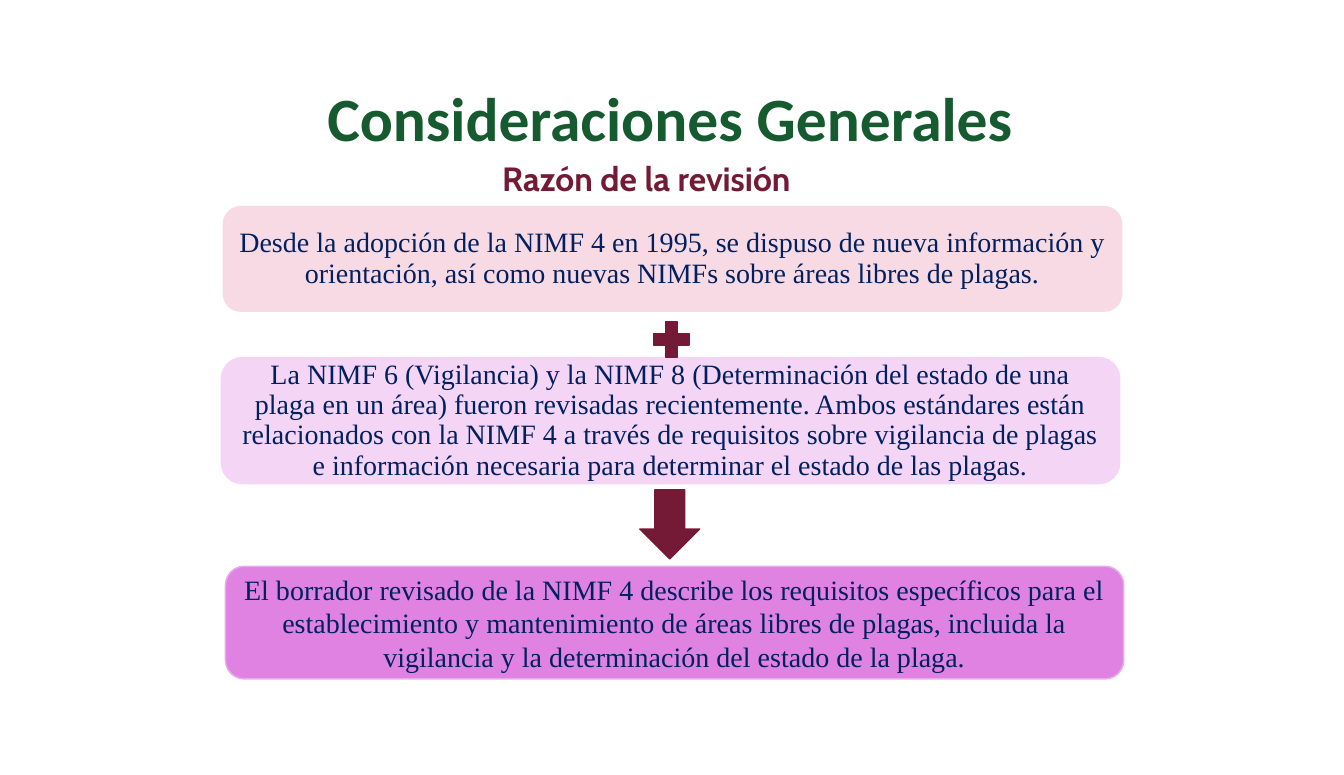
from pptx import Presentation, util as u
from pptx.dml.color import RGBColor
from pptx.enum import shapes, text

GREEN, WINE, NAVY = "165A30", "741A36", "002060"
BOX_WIDTH = 22.07


def colour(value):
    return RGBColor.from_string(value)


class SlideBuilder:
    """Holds the text styles and the slide being filled."""

    styles = {
        "title": {"name": "Calibri", "size": u.Pt(42.9), "bold": True},
        "subtitle": {"name": "Cabin", "size": u.Pt(23.4), "bold": True},
        "body": {"name": "Times New Roman", "size": u.Pt(19.5)},
    }

    def __init__(self, presentation):
        self.slide = presentation.slides.add_slide(presentation.slide_layouts[6])

    def set_text(self, shape, words, style, font_colour, frame_format, **paragraph_format):
        frame = shape.text_frame
        paragraph = frame.paragraphs[0]
        paragraph.text = words
        font = paragraph.runs[0].font
        for target, values in (
            (frame, frame_format),
            (paragraph, paragraph_format),
            (font, self.styles[style]),
        ):
            for name, value in values.items():
                setattr(target, name, value)
        font.color.rgb = colour(font_colour)

    def heading(self, place, words, style, font_colour, frame_format, alignment):
        shape = self.slide.shapes.add_textbox(*map(u.Cm, place))
        self.set_text(shape, words, style, font_colour, frame_format, alignment=alignment)

    def symbol(self, kind, place, fill, line=None):
        shape = self.slide.shapes.add_shape(kind, *map(u.Cm, place))
        shape.shadow.inherit = False
        shape.fill.solid()
        shape.fill.fore_color.rgb = colour(fill)
        shape.line.color.rgb = colour(line or fill)
        shape.line.width = u.Pt(1)
        return shape

    def box(self, left, top, height, words, fill, line, spacing):
        shape = self.symbol(shapes.MSO_SHAPE.ROUNDED_RECTANGLE,
                            (left, top, BOX_WIDTH, height), fill, line)
        self.set_text(shape, words, "body", NAVY,
                      {"word_wrap": True, "vertical_anchor": text.MSO_ANCHOR.MIDDLE},
                      alignment=text.PP_ALIGN.CENTER, line_spacing=spacing)


def main():
    presentation = Presentation()
    presentation.slide_width, presentation.slide_height = u.Cm(33.02), u.Cm(19.05)
    builder = SlideBuilder(presentation)

    builder.heading((5.31, 1.83, 22.3, 3.1), "Consideraciones Generales", "title", GREEN,
                    {"word_wrap": True}, text.PP_ALIGN.CENTER)
    builder.heading((12.09, 3.76, 8.56, 1.24), "Razón de la revisión", "subtitle", WINE,
                    {"word_wrap": False, "auto_size": text.MSO_AUTO_SIZE.SHAPE_TO_FIT_TEXT},
                    text.PP_ALIGN.LEFT)

    boxes = (
        (5.49, 5.08, 2.57,
         "Desde la adopción de la NIMF 4 en 1995, se dispuso de nueva información y "
         "orientación, así como nuevas NIMFs sobre áreas libres de plagas.",
         "F7DAE3", "F7DAE3", 0.9),
        (5.44, 8.79, 3.1,
         "La NIMF 6 (Vigilancia) y la NIMF 8 (Determinación del estado de una plaga en un "
         "área) fueron revisadas recientemente. Ambos estándares están relacionados con la "
         "NIMF 4 a través de requisitos sobre vigilancia de plagas e información necesaria "
         "para determinar el estado de las plagas.",
         "F4D5F5", "F4D5F5", 0.9),
        (5.54, 13.92, 2.77,
         "El borrador revisado de la NIMF 4 describe los requisitos específicos para el "
         "establecimiento y mantenimiento de áreas libres de plagas, incluida la vigilancia "
         "y la determinación del estado de la plaga.",
         "DF82E2", "EAABEB", 1.0),
    )
    for box in boxes:
        builder.box(*box)

    builder.symbol(shapes.MSO_SHAPE.DOWN_ARROW, (15.72, 12.04, 1.47, 1.7), WINE)
    builder.symbol(shapes.MSO_SHAPE.MATH_PLUS, (15.9, 7.75, 1.19, 1.19), WINE)
    presentation.save("out.pptx")


if __name__ == "__main__":
    main()
